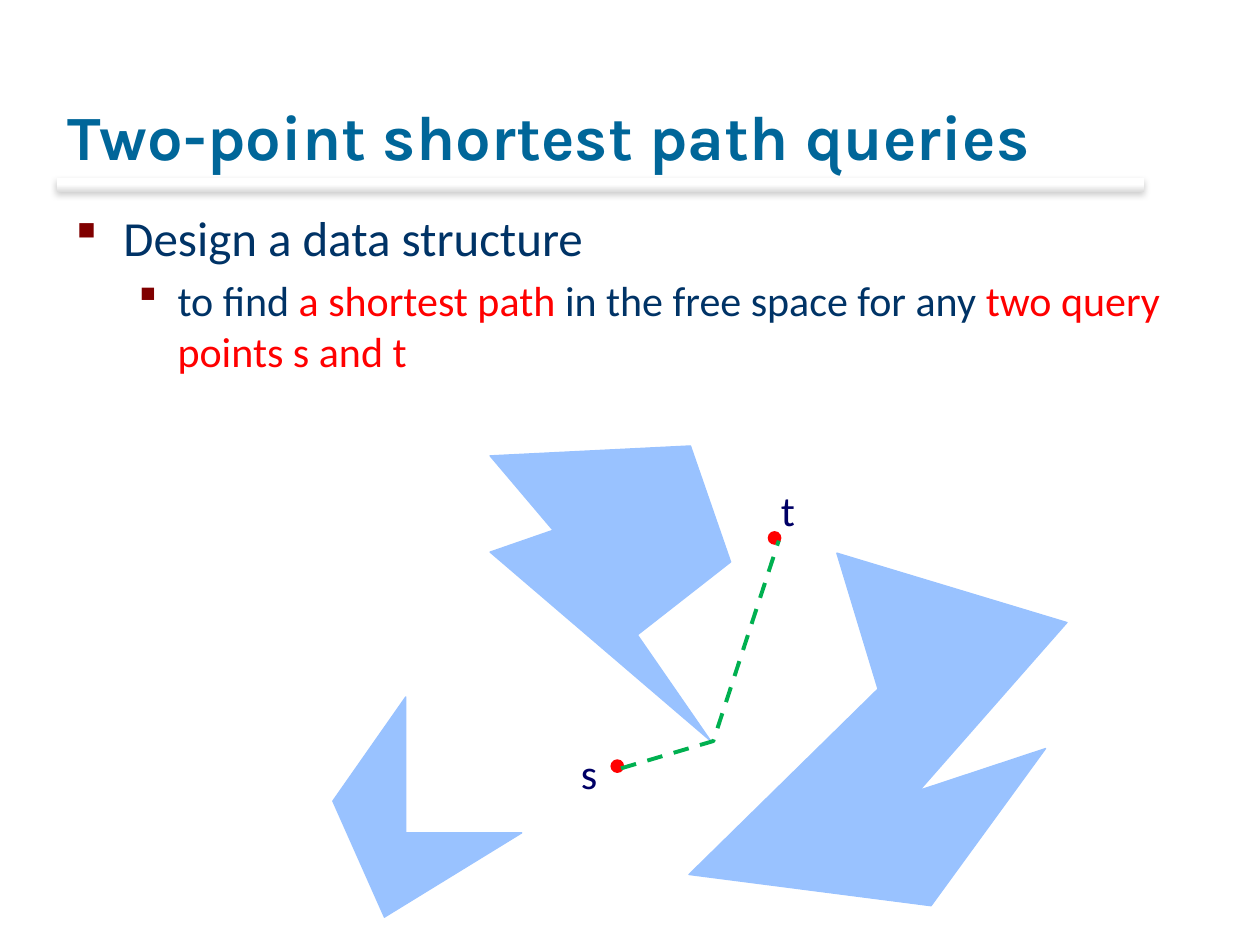
"""Build the slide on two-point shortest path queries."""
from lxml.etree import SubElement
from pptx import Presentation
from pptx.dml.color import RGBColor
from pptx.enum.dml import MSO_LINE
from pptx.enum.shapes import MSO_SHAPE
from pptx.enum.text import MSO_ANCHOR
from pptx.oxml import parse_xml
from pptx.oxml.ns import nsdecls, qn
from pptx.util import Cm, Pt

TEAL = RGBColor(0x00, 0x66, 0x99)
NAVY = RGBColor(0x00, 0x33, 0x66)
INDIGO = RGBColor(0x00, 0x00, 0x66)
MAROON = RGBColor(0x80, 0x00, 0x00)
RED = RGBColor(0xFF, 0x00, 0x00)
BLUE = RGBColor(0x99, 0xC2, 0xFF)
GREEN = RGBColor(0x00, 0xB0, 0x50)
WHITE = RGBColor(0xFF, 0xFF, 0xFF)
GRAY = RGBColor(0xDD, 0xDD, 0xDD)

OBSTACLES = [
    [(16.87, 11.15), (17.7, 13.89), (13.89, 17.63), (18.77, 18.26),
     (21.08, 15.09), (18.54, 15.93), (21.51, 12.55)],
    [(13.92, 8.99), (9.88, 9.19), (11.15, 10.69), (9.88, 11.13),
     (14.33, 14.94), (12.85, 12.8), (14.73, 11.33)],
    [(8.18, 14.05), (6.71, 16.15), (7.75, 18.49), (10.52, 16.79), (8.18, 16.79)],
]
ROUTE = [(12.52, 15.49), (14.38, 14.94), (15.7, 10.9)]
DOTS = [(12.32, 15.32), (15.49, 10.72)]
LABELS = [("s", 11.46, 14.94, 0.84), ("t", 15.49, 9.65, 0.79)]
BULLETS = [
    (28, 0.97, 0.97, [("Design a data structure", NAVY)]),
    (24, 2.06, 0.79, [("to find ", NAVY), ("a shortest path ", RED),
                      ("in the free space for any ", NAVY),
                      ("two query points s and t", RED)]),
]


def add_run(p, text, color, **fmt):
    r = p.add_run()
    r.text = text
    for name, value in fmt.items():
        setattr(r.font, name, value)
    r.font.color.rgb = color
    return r


def add_outline(s, points, close):
    corners = [(Cm(x), Cm(y)) for x, y in points]
    fb = s.shapes.build_freeform(*corners[0])
    fb.add_line_segments(corners[1:], close=close)
    sp = fb.convert_to_shape()
    sp.shadow.inherit = False
    return sp


prs = Presentation()
prs.slide_width, prs.slide_height = Cm(25.4), Cm(19.05)
s = prs.slides.add_slide(prs.slide_layouts[6])

bar = s.shapes.add_shape(MSO_SHAPE.RECTANGLE, Cm(1.14), Cm(3.58), Cm(21.92), Cm(0.28))
bar.line.fill.background()
bar.fill.background()
spPr = bar.element.spPr
spPr.replace(spPr.find(qn("a:noFill")), parse_xml(
    f'<a:gradFill {nsdecls("a")} rotWithShape="0"><a:gsLst>'
    f'<a:gs pos="0"><a:srgbClr val="{WHITE}"/></a:gs>'
    f'<a:gs pos="50000"><a:srgbClr val="{WHITE}"/></a:gs>'
    f'<a:gs pos="100000"><a:srgbClr val="{GRAY}"/></a:gs></a:gsLst>'
    '<a:lin ang="5400000" scaled="0"/></a:gradFill>'))
spPr.append(parse_xml(
    f'<a:effectLst {nsdecls("a")}><a:outerShdw blurRad="50800" dist="25400" dir="5400000" '
    'algn="t" rotWithShape="0"><a:srgbClr val="000000"><a:alpha val="20000"/></a:srgbClr>'
    '</a:outerShdw></a:effectLst>'))

tf = s.shapes.add_textbox(Cm(1.12), Cm(0.43), Cm(21.59), Cm(3.18)).text_frame
tf.word_wrap, tf.vertical_anchor = True, MSO_ANCHOR.BOTTOM
r = add_run(tf.paragraphs[0], "Two-point shortest path queries", TEAL,
            name="Karla", size=Pt(36), bold=True)
r.font._element.set("spc", "10")

tf = s.shapes.add_textbox(Cm(1.27), Cm(4.06), Cm(22.63), Cm(4.06)).text_frame
tf.word_wrap = True
for level, (size, margin, hang, runs) in enumerate(BULLETS):
    p = tf.add_paragraph() if level else tf.paragraphs[0]
    p.level, p.space_before = level, Pt(size * 0.2)
    pPr = p._p.get_or_add_pPr()
    pPr.set("marL", str(Cm(margin)))
    pPr.set("indent", str(-Cm(hang)))
    SubElement(SubElement(pPr, qn("a:buClr")), qn("a:srgbClr"), val=str(MAROON))
    SubElement(pPr, qn("a:buFont"), typeface="Wingdings", charset="2")
    SubElement(pPr, qn("a:buChar"), char="§")
    for text, color in runs:
        add_run(p, text, color, name="Calibri", size=Pt(size))

solids = [(add_outline(s, points, True), BLUE) for points in OBSTACLES]
for x, y in DOTS:
    dot = s.shapes.add_shape(MSO_SHAPE.OVAL, Cm(x), Cm(y), Cm(0.25), Cm(0.25))
    dot.shadow.inherit = False
    solids.append((dot, RED))
for sp, color in solids:
    sp.fill.solid()
    sp.fill.fore_color.rgb = color
    sp.line.color.rgb = color
    sp.line.width = Pt(0.75)

for text, x, y, w in LABELS:
    tf = s.shapes.add_textbox(Cm(x), Cm(y), Cm(w), Cm(1.27)).text_frame
    tf.word_wrap = False
    add_run(tf.paragraphs[0], text, INDIGO, name="Calibri", size=Pt(24))

route = add_outline(s, ROUTE, False)
route.fill.background()
route.line.color.rgb = GREEN
for name, value in {"width": Pt(2.25), "dash_style": MSO_LINE.DASH}.items():
    setattr(route.line, name, value)

prs.save("out.pptx")
